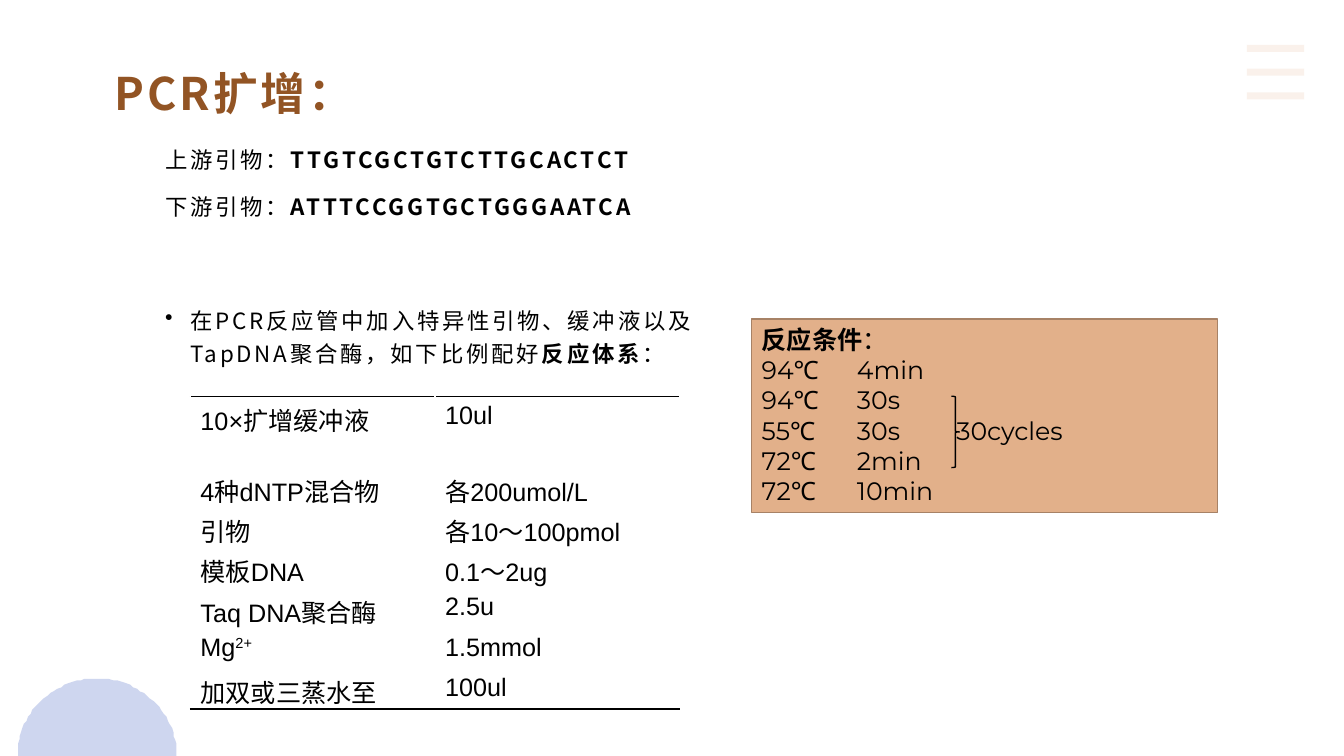
from math import cos, pi, sin

from lxml.etree import SubElement
from pptx import Presentation
from pptx.dml.color import RGBColor
from pptx.enum.shapes import MSO_CONNECTOR, MSO_SHAPE
from pptx.enum.text import MSO_ANCHOR, PP_ALIGN
from pptx.oxml import parse_xml
from pptx.oxml.ns import nsdecls, qn
from pptx.util import Pt

COLORS = {
    "title": "925424",
    "text": "000000",
    "tan": "E2B08A",
    "tan_edge": "A78266",
    "blue": "9FAEE0",
}
CJK = "Noto Sans CJK SC"
PRIMERS = [
    ("上游引物：", "TTGTCGCTGTCTTGCACTCT"),
    ("下游引物：", "ATTTCCGGTGCTGGGAATCA"),
]
MIXTURE = [
    ("在PCR反应管中加入特异性引物、缓冲液以及TapDNA聚合酶，如下比例配好", False),
    ("反应体系", True),
    ("：", False),
]
CONDITIONS = [
    "94℃\t4min",
    "94℃\t30s",
    "55℃\t30s\t30cycles",
    "72℃\t2min",
    "72℃\t10min",
]
REAGENTS = [
    ("10×扩增缓冲液", "10ul"),
    ("4种dNTP混合物", "各200umol/L"),
    ("引物", "各10～100pmol"),
    ("模板DNA", "0.1～2ug"),
    ("Taq DNA聚合酶", "2.5u"),
    ("Mg", "1.5mmol"),
    ("加双或三蒸水至", "100ul"),
]


def color(name):
    return RGBColor.from_string(COLORS[name])


def set_font(paragraph, name, size, shade="text"):
    font = paragraph.font
    font.name, font.size = name, Pt(size)
    font.color.rgb = color(shade)


def add_run(paragraph, text, bold=None, spacing=0):
    run = paragraph.add_run()
    run.text = text
    run.font.bold = bold
    if spacing:
        run._r.get_or_add_rPr().set("spc", str(spacing * 100))
    return run


def set_alpha(fill_parent, percent):
    solid = fill_parent.find(qn("a:solidFill"))
    SubElement(solid[0], qn("a:alpha")).set("val", str(percent * 1000))


def add_textbox(slide, left, top, width, height):
    frame = slide.shapes.add_textbox(Pt(left), Pt(top), Pt(width), Pt(height)).text_frame
    frame.word_wrap = True
    return frame


def add_menu_bars(slide, left, top, width, gap):
    group = slide.shapes.add_group_shape()
    for index in range(3):
        y = Pt(top + index * gap)
        bar = group.shapes.add_connector(MSO_CONNECTOR.STRAIGHT, Pt(left), y, Pt(left + width), y)
        bar.line.color.rgb = color("tan")
        bar.line.width = Pt(5)
        set_alpha(bar.line._get_or_add_ln(), 16)
        SubElement(bar._element.spPr, qn("a:effectLst"))


def add_half_disc(slide, left, top, width, height):
    radius = width / 2
    steps = 60
    points = [
        (left + radius - radius * cos(pi * step / steps), top + height - height * sin(pi * step / steps))
        for step in range(steps + 1)
    ]
    builder = slide.shapes.build_freeform(*points[0], scale=Pt(1))
    builder.add_line_segments(points[1:], close=True)
    disc = builder.convert_to_shape()
    disc.shadow.inherit = False
    disc.fill.solid()
    disc.fill.fore_color.rgb = color("blue")
    set_alpha(disc._element.spPr, 50)
    disc.line.fill.background()


def add_title(slide, left, top, width, height):
    frame = add_textbox(slide, left, top, width, height)
    frame.vertical_anchor = MSO_ANCHOR.MIDDLE
    paragraph = frame.paragraphs[0]
    paragraph.line_spacing = 0.9
    set_font(paragraph, CJK, 32, "title")
    add_run(paragraph, "PCR扩增：", True, 2)


def add_body(slide, left, top, width, height):
    frame = add_textbox(slide, left, top, width, height)
    primers = [[(label, False), (sequence, True)] for label, sequence in PRIMERS]
    for index, parts in enumerate(primers + [MIXTURE]):
        paragraph = frame.add_paragraph() if index else frame.paragraphs[0]
        paragraph.line_spacing = 0.9
        paragraph.space_before = Pt(8 if index else 0)
        paragraph.space_after = Pt(8)
        set_font(paragraph, CJK, 16)
        for text, bold in parts:
            add_run(paragraph, text, bold, 2)
    paragraph.line_spacing = 1.23
    paragraph.space_before = Pt(50)
    properties = paragraph._p.get_or_add_pPr()
    properties.set("marL", str(Pt(18)))
    properties.set("indent", str(-Pt(18)))
    bullet = parse_xml(f'<a:buChar {nsdecls("a")} char="•"/>')
    properties.find(qn("a:defRPr")).addprevious(bullet)


def add_conditions(slide, left, top, width, height):
    box = slide.shapes.add_shape(MSO_SHAPE.RECTANGLE, Pt(left), Pt(top), Pt(width), Pt(height))
    box.shadow.inherit = False
    box.fill.solid()
    box.fill.fore_color.rgb = color("tan")
    box.line.color.rgb = color("tan_edge")
    box.line.width = Pt(1)
    frame = box.text_frame
    frame.vertical_anchor = MSO_ANCHOR.TOP
    for index, text in enumerate(["反应条件"] + CONDITIONS):
        paragraph = frame.add_paragraph() if index else frame.paragraphs[0]
        paragraph.alignment = PP_ALIGN.LEFT
        set_font(paragraph, "Montserrat", 18)
        add_run(paragraph, text, index == 0)
        if index == 0:
            add_run(paragraph, "：", False)
        tabs = parse_xml(f'<a:tabLst {nsdecls("a")}/>')
        for stop in (68, 139):
            tab = SubElement(tabs, qn("a:tab"))
            tab.set("pos", str(Pt(stop)))
            tab.set("algn", "l")
        paragraph._p.get_or_add_pPr().find(qn("a:defRPr")).addprevious(tabs)
    brace = slide.shapes.add_shape(
        MSO_SHAPE.RIGHT_BRACE, Pt(left + 142.5), Pt(top + 55), Pt(5.8), Pt(51)
    )
    brace.shadow.inherit = False
    brace.fill.background()
    brace.line.color.rgb = color("text")
    brace.line.width = Pt(1)


def add_border(cell, side):
    border = parse_xml(
        f'<a:{side} {nsdecls("a")} w="{Pt(1)}"><a:solidFill>'
        f'<a:srgbClr val="{COLORS["text"]}"/></a:solidFill></a:{side}>'
    )
    cell._tc.get_or_add_tcPr().insert(0, border)


def add_reagents(slide, left, top, width, first_height, row_height):
    last = len(REAGENTS) - 1
    height = first_height + last * row_height
    table = slide.shapes.add_table(len(REAGENTS), 2, Pt(left), Pt(top), Pt(width), Pt(height)).table
    table.first_row = table.horz_banding = False
    for row, texts in enumerate(REAGENTS):
        table.rows[row].height = Pt(row_height if row else first_height)
        for column, text in enumerate(texts):
            cell = table.cell(row, column)
            cell.fill.background()
            paragraph = cell.text_frame.paragraphs[0]
            set_font(paragraph, "Arial", 18)
            add_run(paragraph, text)
            if text == "Mg":
                add_run(paragraph, "2+").font._element.set("baseline", "30000")
            if row == 0:
                add_border(cell, "lnT")
            if row == last:
                add_border(cell, "lnB")


def main():
    presentation = Presentation()
    presentation.slide_width, presentation.slide_height = Pt(960), Pt(540)
    slide = presentation.slides.add_slide(presentation.slide_layouts[6])
    add_menu_bars(slide, 890.6, 34.5, 41, 17)
    add_half_disc(slide, 12.5, 484.6, 113.8, 55.4)
    add_title(slide, 75, 16.5, 828, 104.5)
    add_body(slide, 110.9, 103, 400.3, 180)
    add_conditions(slide, 537, 228, 332.6, 138.2)
    add_reagents(slide, 136, 283, 349.5, 50.5, 28.8)
    presentation.save("out.pptx")


if __name__ == "__main__":
    main()
